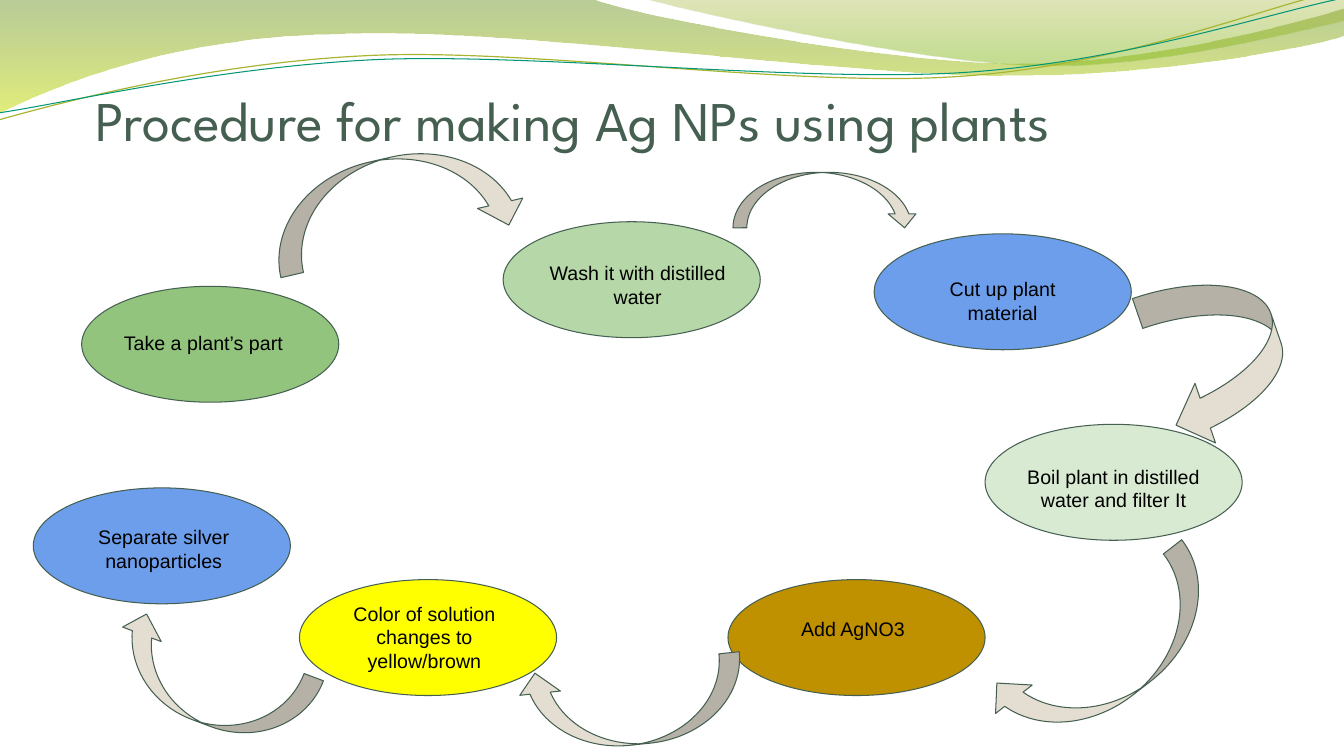
from math import cos, radians, sin

from pptx import Presentation
from pptx.dml.color import RGBColor
from pptx.enum.shapes import MSO_SHAPE
from pptx.enum.text import MSO_ANCHOR, PP_ALIGN
from pptx.oxml import parse_xml
from pptx.oxml.ns import nsdecls
from pptx.util import Inches, Pt

# The slide is a grid of one-inch columns and rows
COLUMNS, ROWS = 13.33, 7.5
LINE_TILT = 357.3
COLORS = {
    "ink": "455F51", "text": "000000", "arrow": "E3DED1",
    "leaf": "93C47D", "mint": "B6D7A8", "pale": "D9EAD3", "blue": "6D9EEB",
    "brown": "BF9000", "yellow": "FFFF00", "olive line": "A8B532",
    "teal line": "029676", "moss": "668F1B", "lime": "CAE00E",
    "straw": "99A719", "grass": "80B814",
}

# Each wave: segments of one point (line) or three points (curve), then
# gradient stops (position, colour, opacity) or a line (colour, width)
FILLED_WAVES = [
    ([[(0, 0)], [(5.87, -0.01)],
      [(6.34, 0.17), (8.84, 0.63), (10.11, 0.63)],
      [(11.37, 0.63), (12.77, 0.26), (13.33, 0.09)], [(13.34, 0.36)],
      [(13.11, 0.44), (11.59, 0.76), (9.94, 0.75)],
      [(8.29, 0.75), (5.09, 0.28), (3.43, 0.34)],
      [(1.72, 0.36), (0.61, 0.83), (-0.02, 1.13)]],
     [(0, "moss", 45), (100, "lime", 55)]),
    ([[(6.38, -0.01)],
      [(6.79, 0.11), (9.09, 0.62), (10.25, 0.65)],
      [(11.4, 0.69), (12.82, 0.32), (13.33, 0.21)], [(13.33, 0)]],
     [(0, "straw", 30), (80, "grass", 45), (100, "grass", 45)]),
]
LINE_WAVES = [
    ([[(-0.01, 1.19)],
      [(0.63, 1.01), (2.1, 0.62), (3.69, 0.55)],
      [(5.27, 0.48), (7.89, 0.87), (9.49, 0.76)],
      [(11.1, 0.66), (12.51, 0.08), (13.3, -0.1)]], "olive line", 0.85),
    ([[(-0.01, 1.12)],
      [(0.62, 1.03), (2.18, 0.66), (3.77, 0.59)],
      [(5.37, 0.53), (7.96, 0.82), (9.55, 0.72)],
      [(11.14, 0.62), (12.55, 0.14), (13.33, -0.02)]], "teal line", 0.75),
]

# Steps: text, colour, oval left and top, label box relative to the oval
OVAL_SIZE = (2.55, 1.15)
STEPS = [
    ("Take a plant’s part", "leaf", (0.81, 1.34), (0.32, 0.34, 1.84, 0.73)),
    ("Wash it with distilled water", "mint", (4.99, 0.7), (0.32, 0.29, 2.03, 0.55)),
    ("Cut up plant material", "blue", (8.67, 0.82), (0.29, 0.33, 1.97, 0.49)),
    ("Boil plant in distilled water and filter It", "pale", (9.77, 2.71),
     (0.26, 0.3, 2.03, 0.55)),
    ("Add AgNO3", "brown", (7.22, 4.25), (0.38, 0.27, 1.72, 0.73)),
    ("Color of solution changes to yellow/brown", "yellow", (2.97, 4.25),
     (0.32, 0.12, 1.84, 0.55)),
    ("Separate silver nanoparticles", "blue", (0.33, 3.34), (0.28, 0.27, 2.03, 0.73)),
]
# Arrows: left, top, width, height, rotation
ARROWS = [
    (2.65, 0.06, 2.55, 0.92, 347), (7.27, 0.21, 1.84, 0.55, 0),
    (11.27, 1.41, 1.64, 1.25, 71), (1.05, 4.86, 2.08, 0.82, 200.7),
    (5.14, 5.08, 2.24, 0.81, 174), (9.72, 4.54, 2.55, 0.92, 142.2),
]


def color(name):
    return RGBColor.from_string(COLORS[name])


def place(box, left, top, width, height):
    return [Inches(n) for n in (box[0] + left, box[1] + top, width, height)]


def style_shape(shape, fill, line="ink", width=0.75):
    shape.shadow.inherit = False
    if fill:
        shape.fill.solid()
        shape.fill.fore_color.rgb = color(fill)
    else:
        shape.fill.background()
    shape.line.color.rgb = color(line)
    shape.line.width = Pt(width)


def style_text(frame, text, size, font, ink):
    frame.word_wrap = True
    frame.text = text
    run = frame.paragraphs[0].runs[0]
    run.font.size, run.font.name = Pt(size), font
    run.font.color.rgb = color(ink)


def turn_points(segments, degrees):
    """Turn the points about the middle between the first and the last."""
    (x1, y1), (x2, y2) = segments[0][0], segments[-1][-1]
    middle_x, middle_y = (x1 + x2) / 2, (y1 + y2) / 2
    c, s = cos(radians(degrees)), sin(radians(degrees))
    return [[(middle_x + (x - middle_x) * c - (y - middle_y) * s,
              middle_y + (x - middle_x) * s + (y - middle_y) * c)
             for x, y in segment] for segment in segments]


def add_outline(slide, box, segments, close):
    points = [(Inches(box[0] + x), Inches(box[1] + y))
              for segment in segments for x, y in segment]
    builder = slide.shapes.build_freeform(*points[0])
    builder.add_line_segments(points[1:], close=close)
    shape = builder.convert_to_shape()
    shape.shadow.inherit = False
    # Merge the three points of each curve into one cubic Bézier
    lines = iter(shape.element.findall(".//{*}lnTo"))
    for segment in segments[1:]:
        parts = [next(lines) for _ in segment]
        if len(parts) == 3:
            curve = parse_xml(f'<a:cubicBezTo {nsdecls("a")}/>')
            parts[0].addprevious(curve)
            for part in parts:
                curve.append(part[0])
                part.getparent().remove(part)
    return shape


def fill_gradient(shape, stops):
    """Fill from top to bottom with partly transparent stops."""
    stop_xml = "".join(
        f'<a:gs pos="{position * 1000}"><a:srgbClr val="{COLORS[name]}">'
        f'<a:alpha val="{opacity * 1000}"/></a:srgbClr></a:gs>'
        for position, name, opacity in stops)
    gradient = parse_xml(f'<a:gradFill {nsdecls("a")}><a:gsLst>{stop_xml}</a:gsLst>'
                         '<a:lin ang="5400000" scaled="0"/></a:gradFill>')
    shape.line.fill.background()
    shape.element.spPr.find(".//{*}custGeom").addnext(gradient)


def add_waves(slide, box):
    for segments, stops in FILLED_WAVES:
        fill_gradient(add_outline(slide, box, segments, True), stops)
    for segments, line, width in LINE_WAVES:
        wave = add_outline(slide, box, turn_points(segments, 360 - LINE_TILT), False)
        wave.rotation = LINE_TILT
        style_shape(wave, None, line, width)


def add_title(slide, box, text):
    title = slide.shapes.title
    title.left, title.top, title.width, title.height = place(box, 0, 0, *box[2:])
    frame = title.text_frame
    style_text(frame, text, 40, "League Spartan", "ink")
    frame.vertical_anchor = MSO_ANCHOR.BOTTOM
    frame.margin_left = frame.margin_right = frame.margin_bottom = 0
    frame.margin_top = Inches(0.05)
    frame.paragraphs[0].alignment = PP_ALIGN.LEFT
    # Bring the title in front of the waves
    title.element.getparent().append(title.element)


def add_cycle(slide, box):
    # Ovals
    for _, fill, corner, _ in STEPS:
        oval = slide.shapes.add_shape(MSO_SHAPE.OVAL, *place(box, *corner, *OVAL_SIZE))
        style_shape(oval, fill)
    # Labels
    for index, (text, _, (left, top), (dx, dy, width, height)) in enumerate(STEPS):
        label = slide.shapes.add_textbox(*place(box, left + dx, top + dy, width, height))
        frame = label.text_frame
        style_text(frame, text, 14, "Arial", "text")
        frame.margin_left = frame.margin_right = Inches(0.1)
        frame.margin_top = frame.margin_bottom = Inches(0.1)
        frame.paragraphs[0].alignment = PP_ALIGN.CENTER if index else PP_ALIGN.LEFT
    # Arrows
    for *bounds, rotation in ARROWS:
        arrow = slide.shapes.add_shape(MSO_SHAPE.CURVED_DOWN_ARROW, *place(box, *bounds))
        arrow.rotation = rotation
        style_shape(arrow, "arrow")


def main():
    presentation = Presentation()
    presentation.slide_width, presentation.slide_height = Inches(COLUMNS), Inches(ROWS)
    slide = presentation.slides.add_slide(presentation.slide_layouts[5])
    add_waves(slide, (0, 0, COLUMNS, 1.2))
    add_title(slide, (0.95, 0.89, 12, 0.62), "Procedure for making Ag NPs using plants")
    add_cycle(slide, (0, 1.5, COLUMNS, 6))
    presentation.save("out.pptx")


if __name__ == "__main__":
    main()
